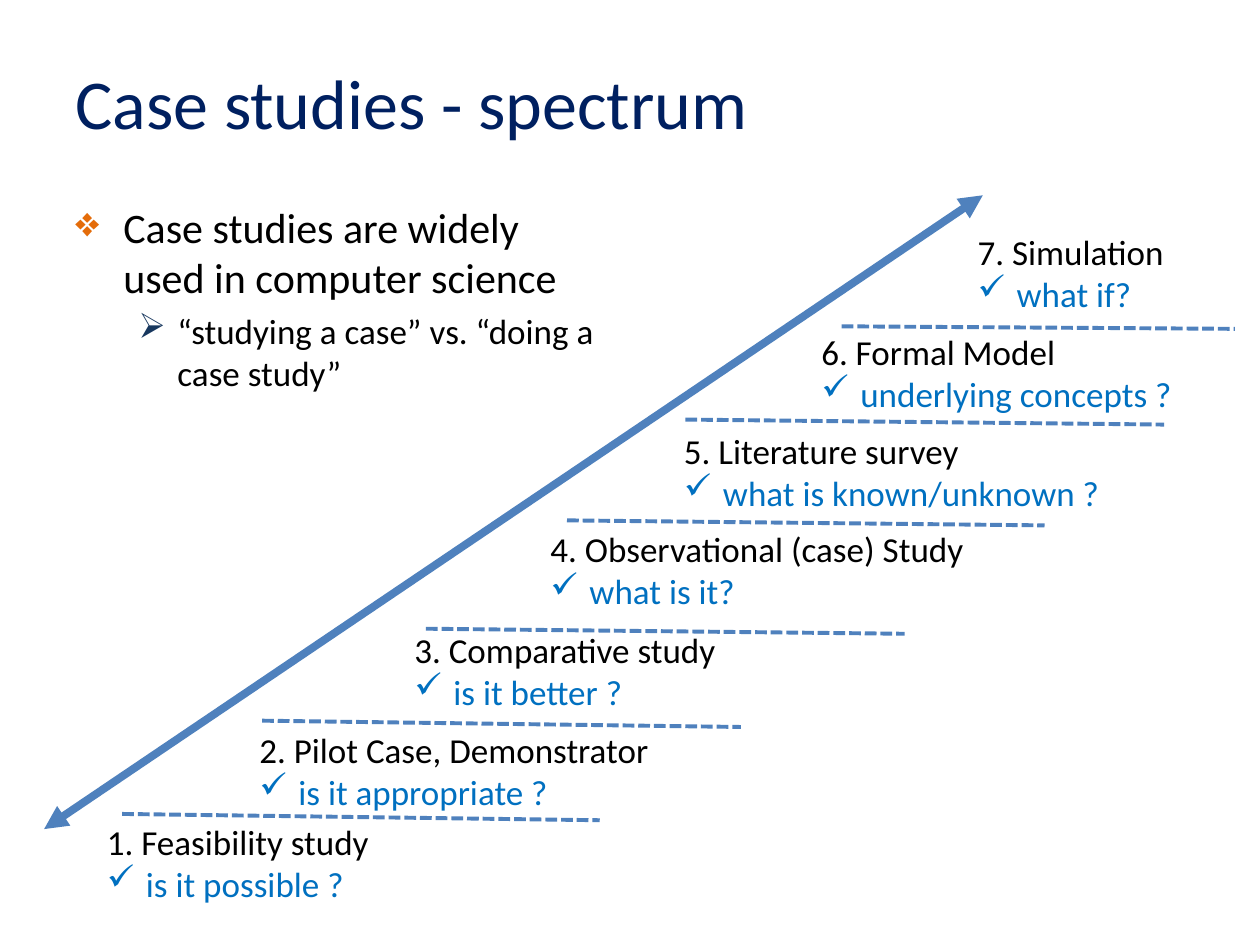
from lxml.etree import SubElement
from pptx import Presentation
from pptx.dml.color import RGBColor
from pptx.enum.dml import MSO_LINE
from pptx.enum.shapes import MSO_CONNECTOR
from pptx.enum.text import MSO_ANCHOR, MSO_AUTO_SIZE
from pptx.oxml.ns import qn
from pptx.util import Inches, Pt

COLORS = {
    "title": "002060", "text": "000000", "question": "0070C0", "line": "4F81BD",
    "diamond": "E46C0A", "arrow_bullet": "17375E",
}

# left, top, width, name, question
STEPS = [
    (0.75, 6.46, 2.3, "1. Feasibility study", "is it possible ?"),
    (1.96, 5.73, 3.32, "2. Pilot Case, Demonstrator", "is it appropriate ?"),
    (3.19, 4.94, 2.61, "3. Comparative study", "is it better ?"),
    (4.27, 4.14, 3.51, "4. Observational (case) Study", "what is it?"),
    (5.33, 3.36, 3.53, "5. Literature survey", "what is known/unknown ?"),
    (6.42, 2.57, 3.07, "6. Formal Model", "underlying concepts ?"),
    (7.66, 1.78, 1.69, "7. Simulation", "what if?"),
]

# left, top, width, drop
DIVIDERS = [
    (0.97, 6.46, 3.79, 0.05),
    (2.08, 5.72, 3.8, 0.05),
    (3.38, 4.99, 3.8, 0.04),
    (4.5, 4.13, 3.79, 0.04),
    (5.44, 3.33, 3.8, 0.04),
    (6.68, 2.59, 3.12, 0.02),
]


def rgb(name):
    return RGBColor.from_string(COLORS[name])


def add_bullet(p, char, color, margin, hanging):
    pPr = p._p.get_or_add_pPr()
    pPr.set("marL", str(Inches(margin)))
    pPr.set("indent", str(-Inches(hanging)))
    clr = SubElement(pPr, qn("a:buClr"))
    SubElement(clr, qn("a:srgbClr"), val=COLORS[color])
    SubElement(pPr, qn("a:buChar"), char=char)


def add_text(slide, box, paragraphs, **frame):
    """Add a text box; each paragraph is (text, size, colour, bullet or None, space before)."""
    tf = slide.shapes.add_textbox(*map(Inches, box)).text_frame
    for name, value in {"word_wrap": True, **frame}.items():
        setattr(tf, name, value)
    for i, (text, size, color, bullet, before) in enumerate(paragraphs):
        p = tf.paragraphs[0] if i == 0 else tf.add_paragraph()
        if bullet:
            add_bullet(p, *bullet)
        if before:
            p.space_before = Pt(before)
        r = p.add_run()
        r.text = text
        for name, value in {"name": "Calibri", "size": Pt(size)}.items():
            setattr(r.font, name, value)
        r.font.color.rgb = rgb(color)


def add_line(slide, start, end, width, dash=None, arrows=False):
    line = slide.shapes.add_connector(
        MSO_CONNECTOR.STRAIGHT, *map(Inches, (*start, *end)))
    line.line.color.rgb = rgb("line")
    line.line.width = Pt(width)
    if dash:
        line.line.dash_style = dash
    if arrows:
        for tag in ("a:headEnd", "a:tailEnd"):
            SubElement(line.line._get_or_add_ln(), qn(tag), type="triangle")
    SubElement(line._element.spPr, qn("a:effectLst"))


def add_step(slide, left, top, width, name, question):
    check = ("✓", "question", 0.31, 0.31)
    add_text(slide, (left, top, width, 0.77),
             [(name, 20, "text", None, 0), (question, 20, "question", check, 0)],
             word_wrap=False, auto_size=MSO_AUTO_SIZE.SHAPE_TO_FIT_TEXT)


def main():
    prs = Presentation()
    prs.slide_width, prs.slide_height = Inches(10), Inches(7.5)
    slide = prs.slides.add_slide(prs.slide_layouts[6])

    add_text(slide, (0.5, 0.3, 9, 1.01),
             [("Case studies - spectrum", 40, "title", None, 0)],
             vertical_anchor=MSO_ANCHOR.MIDDLE)
    add_text(slide, (0.5, 1.55, 4.42, 1.95), [
        ("Case studies are widely used in computer science", 24, "text",
         ("❖", "diamond", 0.38, 0.38), 0),
        ("“studying a case” vs. “doing a case study”", 20, "text",
         ("➢", "arrow_bullet", 0.81, 0.31), 4),
    ])
    add_line(slide, (0.35, 6.58), (7.8, 1.55), 4.5, arrows=True)
    for step in STEPS:
        add_step(slide, *step)
    for left, top, width, drop in DIVIDERS:
        add_line(slide, (left, top), (left + width, top + drop), 2.25,
                 dash=MSO_LINE.SQUARE_DOT)

    prs.save("out.pptx")


if __name__ == "__main__":
    main()
